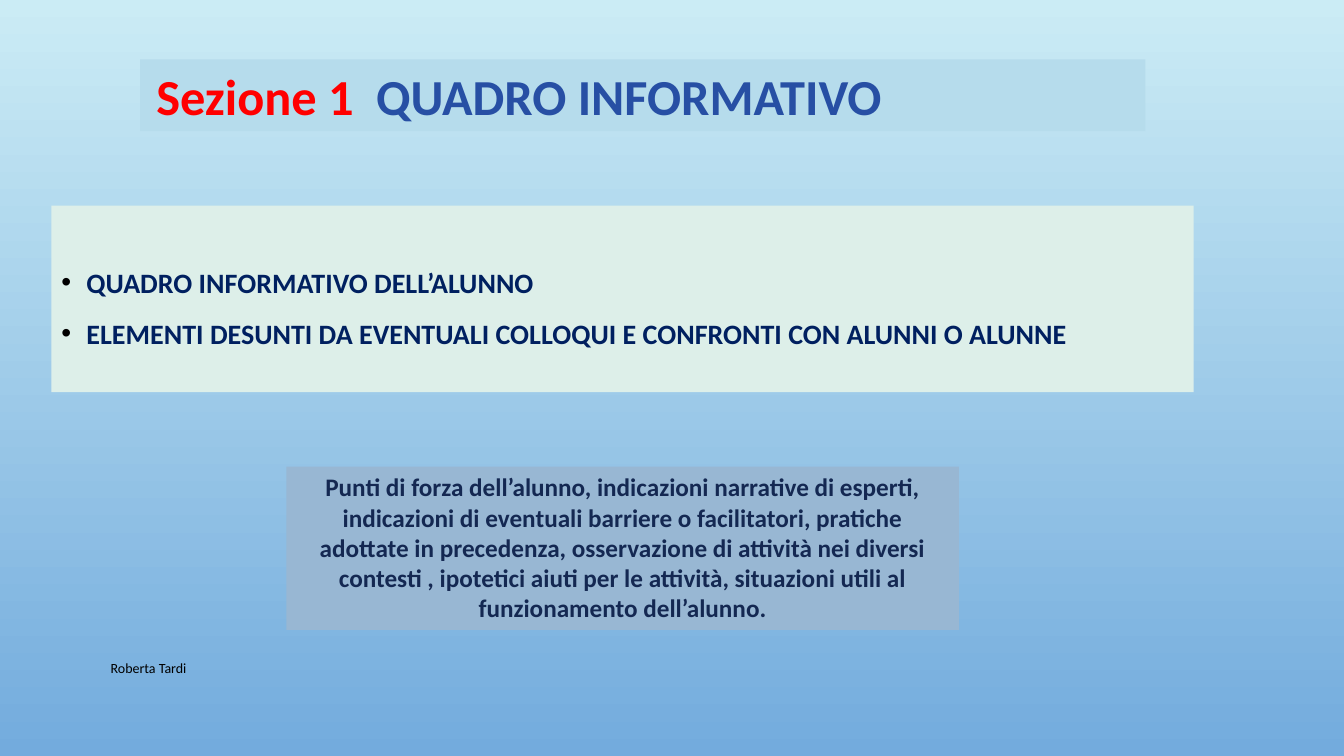
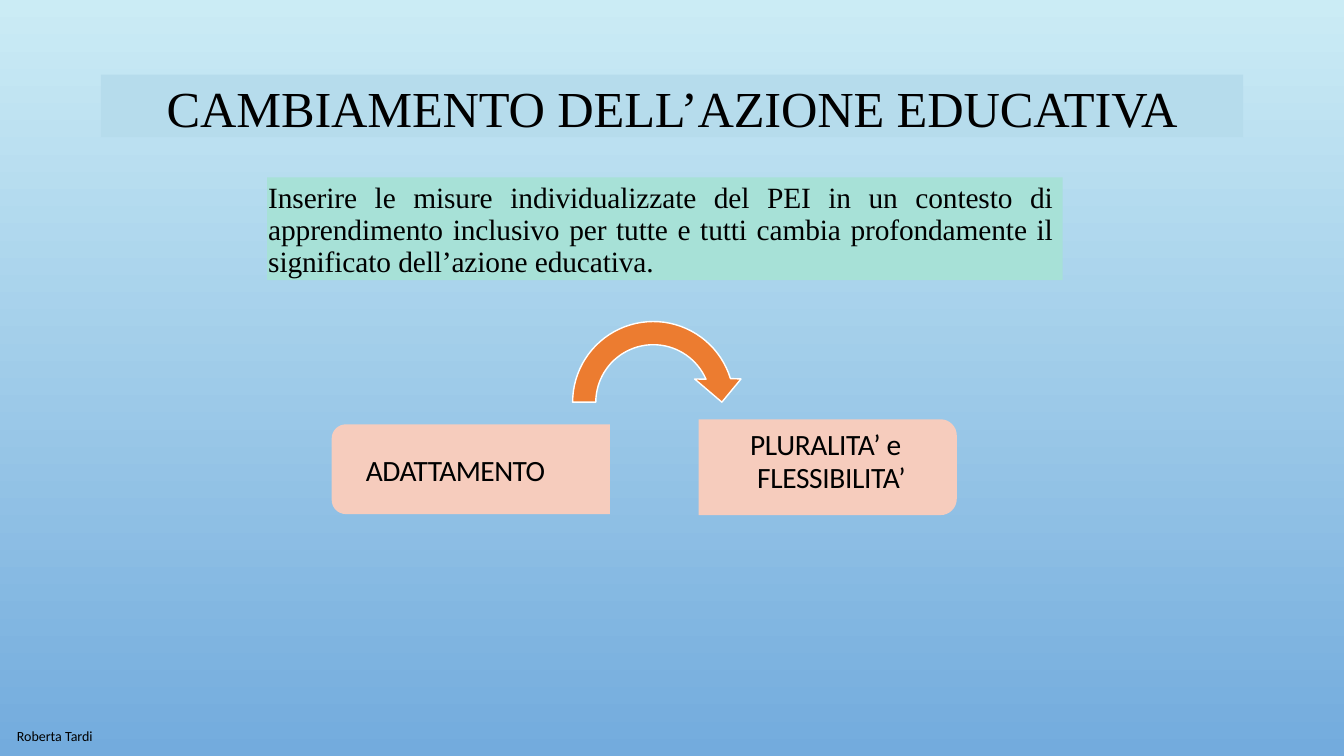
from math import cos, radians, sin
from lxml.etree import SubElement
from pptx import Presentation
from pptx.dml.color import RGBColor
from pptx.enum.text import MSO_ANCHOR, MSO_AUTO_SIZE, PP_ALIGN
from pptx.oxml.ns import qn
from pptx.util import Inches, Pt

SKY_TOP = RGBColor(0xCB, 0xEC, 0xF5)
SKY_BOTTOM = RGBColor(0x73, 0xAB, 0xDD)
BAND = RGBColor(0xB6, 0xDC, 0xEC)
MINT = RGBColor(0xDD, 0xEF, 0xE9)
TEAL = RGBColor(0xA7, 0xE1, 0xD7)
STEEL = RGBColor(0x98, 0xB7, 0xD3)
SALMON = RGBColor(0xF6, 0xCC, 0xBD)
ORANGE = RGBColor(0xEC, 0x7C, 0x30)
RED = RGBColor(0xFF, 0x00, 0x00)
BLUE = RGBColor(0x27, 0x4F, 0xA4)
NAVY = RGBColor(0x00, 0x20, 0x60)
DARK_NAVY = RGBColor(0x14, 0x28, 0x52)
BLACK = RGBColor(0x00, 0x00, 0x00)
WHITE = RGBColor(0xFF, 0xFF, 0xFF)

SANS, SERIF = "Calibri", "Times New Roman"
LEFT, CENTER, JUSTIFY = PP_ALIGN.LEFT, PP_ALIGN.CENTER, PP_ALIGN.JUSTIFY
PADDED = (0.1, 0.05, 0.1, 0.05)

SLIDES = [
    {
        "title": {
            "at": (1.39, 0.59, 9.97, 0.71), "fill": BAND, "insets": (0.16, 0.05, 0.1, 0.05),
            "anchor": MSO_ANCHOR.MIDDLE, "size": 36, "bold": True, "tab": 2.18,
            "paragraphs": [[("Sezione 1\t", RED), ("QUADRO INFORMATIVO", BLUE)]],
        },
        "texts": [
            {
                "at": (0.51, 2.04, 11.33, 1.85), "fill": MINT, "insets": (0.1, 0.56, 0.1, 0.05),
                "size": 20, "bold": True, "bullet": "•", "gap": 10, "line": 1.1,
                "paragraphs": [
                    [("QUADRO INFORMATIVO DELL’ALUNNO", NAVY)],
                    [("ELEMENTI DESUNTI DA EVENTUALI COLLOQUI E CONFRONTI "
                      "CON ALUNNI O ALUNNE", NAVY)],
                ],
            },
            {
                "at": (2.84, 4.63, 6.67, 1.62), "fill": STEEL, "align": CENTER,
                "size": 18, "bold": True,
                "paragraphs": [[(
                    "Punti di forza dell’alunno, indicazioni narrative di esperti, indicazioni "
                    "di eventuali barriere o facilitatori, pratiche adottate in precedenza, "
                    "osservazione di attività nei diversi contesti , ipotetici aiuti per le "
                    "attività, situazioni utili al funzionamento dell’alunno.", DARK_NAVY)]],
            },
        ],
        "footer": (1, 6.43, 7.3, 0.4),
    },
    {
        "title": {
            "at": (1, 0.74, 11.33, 0.62), "fill": BAND, "insets": (0, 0.03, 0, 0),
            "anchor": MSO_ANCHOR.MIDDLE, "align": CENTER, "size": 36, "font": SERIF,
            "spacing": -10,
            "paragraphs": [[("CAMBIAMENTO DELL’AZIONE EDUCATIVA", BLACK)]],
        },
        "blocks": [
            {"at": (3.29, 4.21, 2.76, 0.89), "radius": 0.14, "round_left": True},
            {"at": (6.93, 4.16, 2.56, 0.95), "radius": 0.16, "round_left": False},
        ],
        "arrow": {"center": (6.48, 3.99), "outer": 0.8, "inner": 0.57, "head": 0.23},
        "texts": [
            {
                "at": (2.65, 1.76, 7.89, 1.02), "fill": TEAL, "insets": (0.01, 0.05, 0.1, 0),
                "align": JUSTIFY, "size": 21, "font": SERIF, "spacing": -8, "line": Pt(22.8),
                "paragraphs": [[(
                    "Inserire le misure individualizzate del PEI in un contesto di "
                    "apprendimento inclusivo per tutte e tutti cambia profondamente il "
                    "significato dell’azione educativa.", BLACK)]],
            },
            {
                "at": (3.62, 4.48, 1.85, 0.36), "insets": (0.01, 0.01, 0, 0),
                "size": 21, "spacing": -40, "paragraphs": [[("ADATTAMENTO", BLACK)]],
            },
            {
                "at": (7.43, 4.21, 1.56, 0.69), "insets": (0.01, 0.05, 0, 0),
                "size": 21, "spacing": -25, "line": Pt(23.1), "hanging": 0.07,
                "paragraphs": [[("PLURALITA’ e FLESSIBILITA’", BLACK)]],
            },
        ],
        "footer": (0.07, 7.1, 1.07, 0.4),
    },
]

FOOTER = {"size": 10, "anchor": MSO_ANCHOR.MIDDLE, "paragraphs": [[("Roberta Tardi", BLACK)]]}


def set_all(target, values):
    for name, value in values.items():
        setattr(target, name, value)


def place(box, at):
    set_all(box, dict(zip(("left", "top", "width", "height"), map(Inches, at))))


def indent(para, depth):
    properties = para._p.get_or_add_pPr()
    properties.set("marL", str(Inches(depth)))
    properties.set("indent", str(-Inches(depth)))
    return properties


def add_bullet(para, character):
    properties = indent(para, 0.25)
    color = SubElement(properties, qn("a:buClr"))
    SubElement(color, qn("a:srgbClr"), val=str(BLACK))
    SubElement(properties, qn("a:buFont"), typeface="Arial")
    SubElement(properties, qn("a:buChar"), char=character)


def add_tab(para, position):
    stops = SubElement(para._p.get_or_add_pPr(), qn("a:tabLst"))
    SubElement(stops, qn("a:tab"), pos=str(Inches(position)), algn="l")


def write_text(box, item):
    place(box, item["at"])
    if "fill" in item:
        box.fill.solid()
        box.fill.fore_color.rgb = item["fill"]
    frame = box.text_frame
    sides = ("margin_left", "margin_top", "margin_right", "margin_bottom")
    set_all(frame, dict(zip(sides, map(Inches, item.get("insets", PADDED)))))
    set_all(frame, {"word_wrap": True, "auto_size": MSO_AUTO_SIZE.NONE,
                    "vertical_anchor": item.get("anchor", MSO_ANCHOR.TOP)})
    for index, spans in enumerate(item["paragraphs"]):
        para = frame.add_paragraph() if index else frame.paragraphs[0]
        if "bullet" in item:
            add_bullet(para, item["bullet"])
        if "hanging" in item:
            indent(para, item["hanging"])
        if "tab" in item:
            add_tab(para, item["tab"])
        set_all(para, {"alignment": item.get("align", LEFT),
                       "line_spacing": item.get("line", 1.0),
                       "space_before": Pt(item.get("gap", 0) if index else 0)})
        for text, color in spans:
            span = para.add_run()
            span.text = text
            set_all(span.font, {"name": item.get("font", SANS), "size": Pt(item["size"]),
                                "bold": item.get("bold", False)})
            span.font.color.rgb = color
            if "spacing" in item:
                span._r.get_or_add_rPr().set("spc", str(item["spacing"]))


def arc(center, radius, start, end, steps):
    angles = [radians(start + (end - start) * step / steps) for step in range(steps + 1)]
    return [(center[0] + radius * cos(angle), center[1] - radius * sin(angle))
            for angle in angles]


def add_outline(page, points, fill, line=None):
    corners = [(Inches(x), Inches(y)) for x, y in points]
    builder = page.shapes.build_freeform(*corners[0])
    builder.add_line_segments(corners[1:], close=True)
    shape = builder.convert_to_shape()
    shape.shadow.inherit = False
    shape.fill.solid()
    shape.fill.fore_color.rgb = fill
    if line is None:
        shape.line.fill.background()
    else:
        shape.line.color.rgb = line
        shape.line.width = Pt(1)


def add_block(page, block):
    left, top, width, height = block["at"]
    radius = block["radius"]
    right, bottom = left + width, top + height
    upper, lower = top + radius, bottom - radius
    if block["round_left"]:
        x = left + radius
        points = [(right, top), *arc((x, upper), radius, 90, 180, 8),
                  *arc((x, lower), radius, 180, 270, 8), (right, bottom)]
    else:
        x = right - radius
        points = [(left, top), *arc((x, upper), radius, 90, 0, 8),
                  *arc((x, lower), radius, 0, -90, 8), (left, bottom)]
    add_outline(page, points, SALMON)


def add_curved_arrow(page, arrow):
    center, head = arrow["center"], arrow["head"]
    x, y = center
    neck = y - head
    points = [*arc(center, arrow["outer"], 180, 17, 40),
              (x + 0.87, neck), (x + 0.68, y), (x + 0.41, neck),
              *arc(center, arrow["inner"], 23.5, 180, 40)]
    add_outline(page, points, ORANGE, WHITE)


def paint_background(master):
    fill = master.background.fill
    fill.gradient()
    fill.gradient_angle = 270
    for stop, color, position in zip(fill.gradient_stops, (SKY_TOP, SKY_BOTTOM), (0, 1)):
        stop.color.rgb = color
        stop.position = position


def main():
    deck = Presentation()
    set_all(deck, {"slide_width": Inches(13.33), "slide_height": Inches(7.5)})
    paint_background(deck.slide_master)
    for content in SLIDES:
        page = deck.slides.add_slide(deck.slide_layouts[5])
        write_text(page.shapes.title, content["title"])
        for block in content.get("blocks", []):
            add_block(page, block)
        if "arrow" in content:
            add_curved_arrow(page, content["arrow"])
        for item in content["texts"] + [{**FOOTER, "at": content["footer"]}]:
            write_text(page.shapes.add_textbox(0, 0, 0, 0), item)
    deck.save("out.pptx")


if __name__ == "__main__":
    main()
